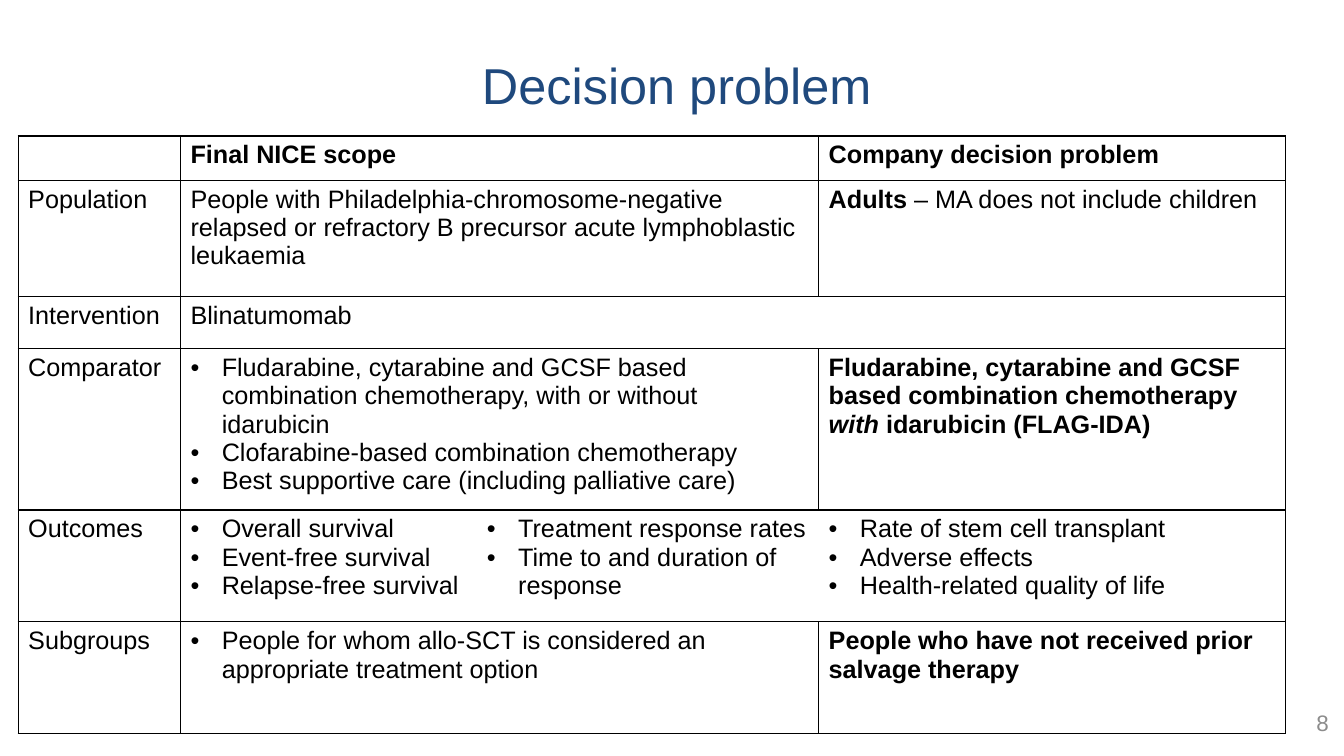
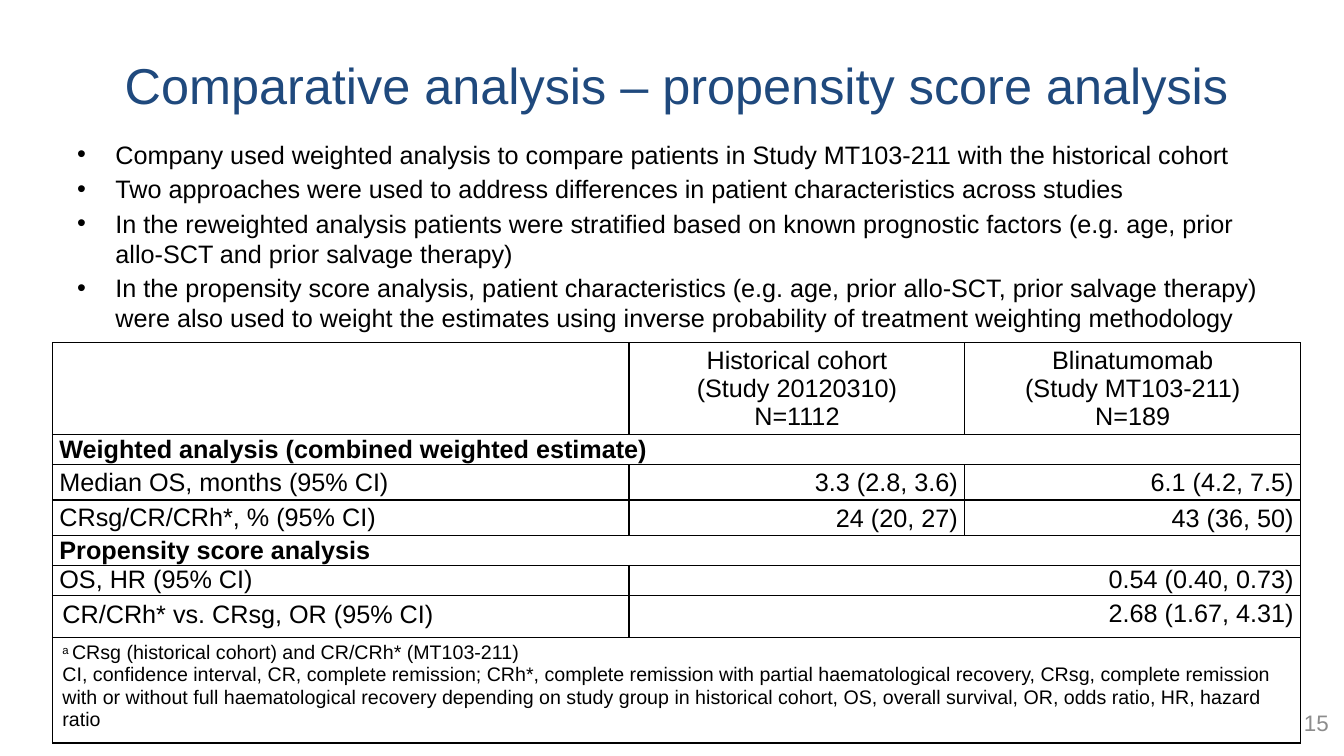
from lxml import etree
from pptx import Presentation
from pptx.dml.color import RGBColor
from pptx.enum.text import MSO_ANCHOR, PP_ALIGN
from pptx.oxml.ns import qn
from pptx.util import Emu, Inches, Pt

LEFT, CENTER, RIGHT = PP_ALIGN.LEFT, PP_ALIGN.CENTER, PP_ALIGN.RIGHT
TOP, MIDDLE = MSO_ANCHOR.TOP, MSO_ANCHOR.MIDDLE
TITLE_ONLY = 5
FONT = "Arial"
COLORS = {"title": "1F497D", "text": "000000", "number": "8C8C8C", "line": "000000"}
BULLET = "• "

# Left, top, width and height in percent of the slide
TITLE_BOX = (5, 2.8, 90.7, 16.67)
NUMBER_BOX = (76.3, 92.93, 23.3, 5.33)
BODY_BOX = (5, 17.73, 90.7, 28)

prs = Presentation()
prs.slide_width, prs.slide_height = Inches(13.33), Inches(7.5)


def write(tf, paragraphs, size=18, color="text", align=LEFT, indent=0.31, before=0):
    """Fill tf; a paragraph is a string or a list of (text, style) runs.

    A leading bullet sign makes a list item; styles are b(old), i(talic), s(uperscript).
    """
    for i, runs in enumerate(paragraphs):
        p = tf.paragraphs[0] if i == 0 else tf.add_paragraph()
        p.alignment, p.space_before = align, Pt(before)
        if isinstance(runs, str):
            if runs.startswith(BULLET):
                pPr = p._p.get_or_add_pPr()
                pPr.set("marL", str(Inches(indent)))
                pPr.set("indent", str(-Inches(indent)))
                etree.SubElement(pPr, qn("a:buFont")).set("typeface", FONT)
                etree.SubElement(pPr, qn("a:buChar")).set("char", BULLET.strip())
            runs = [(runs.removeprefix(BULLET), "")]
        for text, style in runs:
            r = p.add_run()
            r.text = text
            r.font.name, r.font.size = FONT, Pt(size)
            r.font.color.rgb = RGBColor.from_string(COLORS[color])
            r.font.bold, r.font.italic = "b" in style, "i" in style
            if "s" in style:
                r._r.get_or_add_rPr().set("baseline", "30000")


def add_grid(slide, left, top, cols, rows, content, open_row=None):
    """Add a ruled table; None joins a cell to its left neighbour.

    The cells of open_row have no lines between them after the first column.
    """
    table = slide.shapes.add_table(
        len(rows), len(cols), Emu(int(prs.slide_width * left / 100)),
        Emu(int(prs.slide_height * top / 100)), Inches(sum(cols)), Inches(sum(rows))).table
    table.first_row = table.horz_banding = False
    for col, width in zip(table.columns, cols):
        col.width = Inches(width)
    for row, height in zip(table.rows, rows):
        row.height = Inches(height)
    last = len(cols) - 1
    for y, cells in enumerate(content):
        for x, text in enumerate(cells):
            cell = table.cell(y, x)
            cell.fill.background()
            hidden = set()
            if y == open_row:
                hidden = {"L"} if x > 1 else set()
                hidden |= {"R"} if 0 < x < last else set()
            for i, side in enumerate("LRTB"):
                ln = etree.Element(qn(f"a:ln{side}"), w=str(Pt(1)))
                if side in hidden:
                    etree.SubElement(ln, qn("a:noFill"))
                else:
                    fill = etree.SubElement(ln, qn("a:solidFill"))
                    etree.SubElement(fill, qn("a:srgbClr")).set("val", COLORS["line"])
                cell._tc.get_or_add_tcPr().insert(i, ln)
            if text is not None:
                end = x
                while end < last and cells[end + 1] is None:
                    end += 1
                if end > x:
                    cell.merge(table.cell(y, end))
    return table


decision_rows = [
    [[], [[("Final NICE scope", "b")]], None, [[("Company decision problem", "b")]]],
    [["Population"],
     ["People with Philadelphia-chromosome-negative relapsed or refractory "
      "B precursor acute lymphoblastic leukaemia"], None,
     [[("Adults", "b"), (" – MA does not include children", "")]]],
    [["Intervention"], ["Blinatumomab"], None, None],
    [["Comparator"],
     ["• Fludarabine, cytarabine and GCSF based combination chemotherapy, "
      "with or without idarubicin",
      "• Clofarabine-based combination chemotherapy",
      "• Best supportive care (including palliative care)"], None,
     [[("Fludarabine, cytarabine and GCSF based combination chemotherapy ", "b"),
       ("with ", "bi"), ("idarubicin (FLAG-IDA)", "b")]]],
    [["Outcomes"],
     ["• Overall survival", "• Event-free survival", "• Relapse-free survival"],
     ["• Treatment response rates", "• Time to and duration of response"],
     ["• Rate of stem cell transplant", "• Adverse effects",
      "• Health-related quality of life"]],
    [["Subgroups"],
     ["• People for whom allo-SCT is considered an appropriate treatment option"], None,
     [[("People who have not received prior salvage therapy", "b")]]],
]

analysis_points = [
    "• Company used weighted analysis to compare patients in Study MT103-211 "
    "with the historical cohort",
    "• Two approaches were used to address differences in patient characteristics "
    "across studies",
    "• In the reweighted analysis patients were stratified based on known prognostic "
    "factors (e.g. age, prior allo-SCT and prior salvage therapy)",
    "• In the propensity score analysis, patient characteristics (e.g. age, prior "
    "allo-SCT, prior salvage therapy) were also used to weight the estimates using "
    "inverse probability of treatment weighting methodology",
]

analysis_rows = [
    [[], ["Historical cohort", "(Study 20120310)", "N=1112"],
     ["Blinatumomab", "(Study MT103-211)", "N=189"]],
    [[[("Weighted analysis (combined weighted estimate)", "b")]], None, None],
    [["Median OS, months (95% CI)"], ["3.3 (2.8, 3.6)"], ["6.1 (4.2, 7.5)"]],
    [["CRsg/CR/CRh*, % (95% CI)"], ["24 (20, 27)"], ["43 (36, 50)"]],
    [[[("Propensity score analysis", "b")]], None, None],
    [["OS, HR (95% CI)"], ["0.54 (0.40, 0.73)"], None],
    [["CR/CRh* vs. CRsg, OR (95% CI)"], ["2.68 (1.67, 4.31)"], None],
    [[[("a ", "s"), ("CRsg (historical cohort) and CR/CRh* (MT103-211)", "")],
      "CI, confidence interval, CR, complete remission; CRh*, complete remission with "
      "partial haematological recovery, CRsg, complete remission with or without full "
      "haematological recovery depending on study group in historical cohort, OS, overall "
      "survival, OR, odds ratio, HR, hazard ratio"], None, None],
]

# Title, slide number and body text
slides = []
for title, number, points in [
    ("Decision problem", "8", []),
    ("Comparative analysis – propensity score analysis", "15", analysis_points),
]:
    slide = prs.slides.add_slide(prs.slide_layouts[TITLE_ONLY])
    slides.append(slide)
    number_box = slide.shapes.add_textbox(0, 0, 0, 0)
    parts = [
        (slide.shapes.title, TITLE_BOX, MIDDLE, [title],
         {"size": 36, "color": "title", "align": CENTER}),
        (number_box, NUMBER_BOX, MIDDLE, [number],
         {"size": 16, "color": "number", "align": RIGHT}),
    ]
    if points:
        body = slide.shapes.add_textbox(0, 0, 0, 0)
        parts.append((body, BODY_BOX, TOP, points, {"indent": 0.38, "before": 3}))
    for sp, (x, y, w, h), anchor, paragraphs, style in parts:
        sp.left, sp.width = (Emu(int(prs.slide_width * v / 100)) for v in (x, w))
        sp.top, sp.height = (Emu(int(prs.slide_height * v / 100)) for v in (y, h))
        tf = sp.text_frame
        tf.word_wrap, tf.vertical_anchor = True, anchor
        write(tf, paragraphs, **style)

# Decision problem table
table = add_grid(slides[0], 1.35, 18, [1.61, 2.94, 3.39, 4.63],
                 [0.44, 1.15, 0.52, 1.45, 1.11, 1.11], decision_rows, open_row=4)
for y, cells in enumerate(decision_rows):
    for x, paragraphs in enumerate(cells):
        write(table.cell(y, x).text_frame, paragraphs or [])

# Propensity score table
table = add_grid(slides[1], 3.9, 45.33, [5.72, 3.33, 3.33],
                 [0.91, 0.3, 0.35, 0.35, 0.3, 0.3, 0.41, 1.05], analysis_rows)
OS_ROW, ODDS_ROW, NOTE_ROW = 5, 6, 7
for y, cells in enumerate(analysis_rows):
    for x, paragraphs in enumerate(cells):
        if not paragraphs:
            continue
        cell = table.cell(y, x)
        if y < ODDS_ROW or x > 0:
            cell.margin_left = cell.margin_right = Inches(0.07)
            cell.margin_top = cell.margin_bottom = 0
        cell.vertical_anchor = MIDDLE if y == 0 or (x == 0 and y < OS_ROW) else TOP
        align = LEFT if x == 0 else CENTER if y == 0 else RIGHT
        write(cell.text_frame, paragraphs, size=14 if y == NOTE_ROW else 18, align=align)
        if align == RIGHT and y != OS_ROW:
            cell.text_frame.paragraphs[0].line_spacing = 1.15

prs.save("out.pptx")
